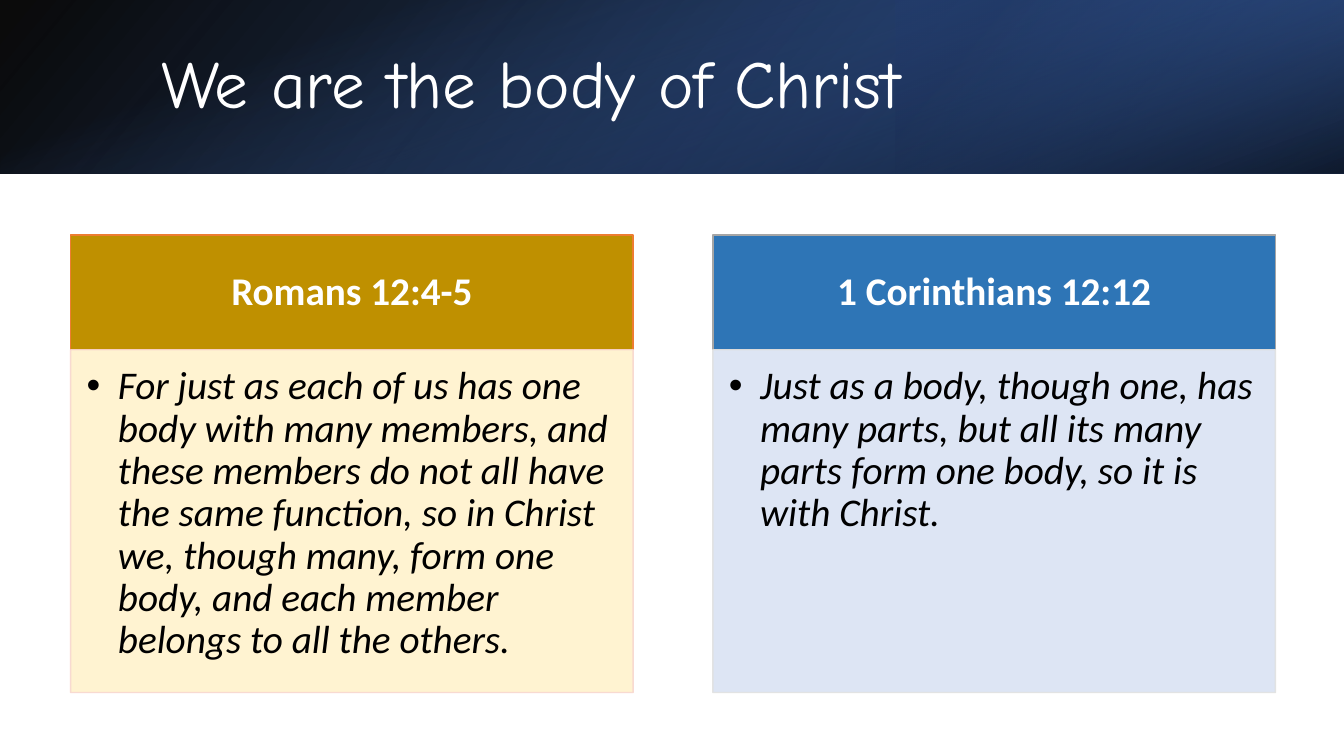
from lxml import etree
from pptx import Presentation
from pptx import util as u
from pptx.dml.color import RGBColor
from pptx.enum import shapes, text
from pptx.oxml import parse_xml
from pptx.oxml.ns import nsdecls, qn

WIDTH, HEIGHT = 13.33, 7.5
BAND_HEIGHT = 1.72
COLUMN_WIDTH, COLUMN_TOP = 5.58, 2.33
HEADING_HEIGHT, VERSE_HEIGHT = 1.14, 3.4
FIRST_LEFT, COLUMN_STEP = 0.7, 6.37


def color(value):
    return RGBColor.from_string(value)


def place(shape, left, top, width, height):
    shape.left, shape.top = u.Inches(left), u.Inches(top)
    shape.width, shape.height = u.Inches(width), u.Inches(height)


def set_alpha(fill_format, percent):
    """Make the solid fill partly transparent."""
    for tone in fill_format.iter(qn("a:srgbClr")):
        etree.SubElement(tone, qn("a:alpha")).set("val", str(percent * 1000))


def gradient_band(page, box, stops, angle, rotation=0, flip=False):
    """Add a borderless gradient rectangle behind the title."""
    band = page.shapes.add_shape(shapes.MSO_SHAPE.RECTANGLE,
                                 *[u.Inches(length) for length in box])
    band.shadow.inherit = False
    band.line.fill.background()
    band.rotation = rotation
    properties = band._element.spPr
    if flip:
        properties.find(qn("a:xfrm")).set("flipH", "1")
    marks = "".join(
        f'<a:gs pos="{position * 1000}"><a:srgbClr val="{tone}">'
        f'<a:alpha val="{alpha * 1000}"/></a:srgbClr></a:gs>'
        for position, tone, alpha in stops)
    properties.find(qn("a:prstGeom")).addnext(parse_xml(
        f'<a:gradFill {nsdecls("a")} rotWithShape="1"><a:gsLst>{marks}</a:gsLst>'
        f'<a:lin ang="{angle * 60000}" scaled="0"/></a:gradFill>'))
    page.shapes.title._element.addprevious(band._element)


def write(shape, words, size, font, tone, anchor, insets=None):
    """Fill a placeholder with one formatted paragraph and return it."""
    frame = shape.text_frame
    frame.text = words
    frame.word_wrap = True
    frame.auto_size = text.MSO_AUTO_SIZE.NONE
    frame.vertical_anchor = anchor
    if insets:
        (frame.margin_left, frame.margin_top,
         frame.margin_right, frame.margin_bottom) = [u.Inches(i) for i in insets]
    para = frame.paragraphs[0]
    para.line_spacing = 0.9
    para.space_before = u.Pt(0)
    para.font.size, para.font.name = u.Pt(size), font
    para.font.color.rgb = color(tone)
    return para


def paint(shape, fill, line):
    shape.fill.solid()
    shape.fill.fore_color.rgb = color(fill)
    shape.line.color.rgb = color(line)
    shape.line.width = u.Pt(1)


def header(page, left, top, width, height):
    # Three layered gradients
    gradient_band(page, (left, top, width, height),
                  [(0, "000000", 96), (100, "2F5597", 100)], 140, flip=True)
    gradient_band(page, (left + width * 2 / 3, top, width / 3, height),
                  [(19, "203864", 68), (100, "4472C4", 79)], 320, 180, True)
    shift = (width - height) / 2
    gradient_band(page, (left + shift, top - shift, height, width),
                  [(23, "4472C4", 0), (99, "000000", 74)], 340, 90)
    # Title
    title = page.shapes.title
    place(title, left + 1.5, top + 0.38, 10.98, 0.96)
    para = write(title, "We are the body of Christ", 48, "Comic Neue", "FFFFFF",
                 text.MSO_ANCHOR.MIDDLE)
    para.alignment = text.PP_ALIGN.LEFT


def verse_column(heading, verse, left, top, reference, words, tones):
    heading_fill, heading_line, verse_fill, verse_line = tones
    # Reference
    place(heading, left, top, COLUMN_WIDTH, HEADING_HEIGHT)
    paint(heading, heading_fill, heading_line)
    para = write(heading, reference, 28, "Calibri", "FFFFFF",
                 text.MSO_ANCHOR.MIDDLE, (0.22, 0.12, 0.22, 0.12))
    para.alignment = text.PP_ALIGN.CENTER
    para.font.bold = True
    # Quotation
    place(verse, left, top + HEADING_HEIGHT, COLUMN_WIDTH, VERSE_HEIGHT)
    paint(verse, verse_fill, verse_line)
    set_alpha(verse._element.spPr, 90)
    para = write(verse, words, 28, "Calibri", "000000",
                 text.MSO_ANCHOR.TOP, (0.16, 0.16, 0.22, 0.24))
    para.font.italic = True
    indent = u.Inches(0.31)
    settings = para._p.get_or_add_pPr()
    settings.set("marL", str(indent))
    settings.set("indent", str(-indent))


VERSES = [
    ("Romans 12:4-5",
     "For just as each of us has one body with many members, and these members "
     "do not all have the same function, so in Christ we, though many, form one "
     "body, and each member belongs to all the others.",
     ("BF9000", "ED7D31", "FFF2CC", "F8D7CE")),
    ("1 Corinthians 12:12",
     "Just as a body, though one, has many parts, but all its many parts form "
     "one body, so it is with Christ.",
     ("2E75B6", "A5A5A5", "DAE3F3", "E1E1E1")),
]


def main():
    deck = Presentation()
    deck.slide_width, deck.slide_height = u.Inches(WIDTH), u.Inches(HEIGHT)
    page = deck.slides.add_slide(deck.slide_layouts.get_by_name("Comparison"))
    header(page, 0, 0, WIDTH, BAND_HEIGHT)
    boxes = [box for box in page.placeholders if box.placeholder_format.idx > 0]
    for column, content in enumerate(VERSES):
        heading, verse = boxes[2 * column:2 * column + 2]
        verse_column(heading, verse, FIRST_LEFT + column * COLUMN_STEP,
                     COLUMN_TOP, *content)
    deck.save("out.pptx")


if __name__ == "__main__":
    main()
